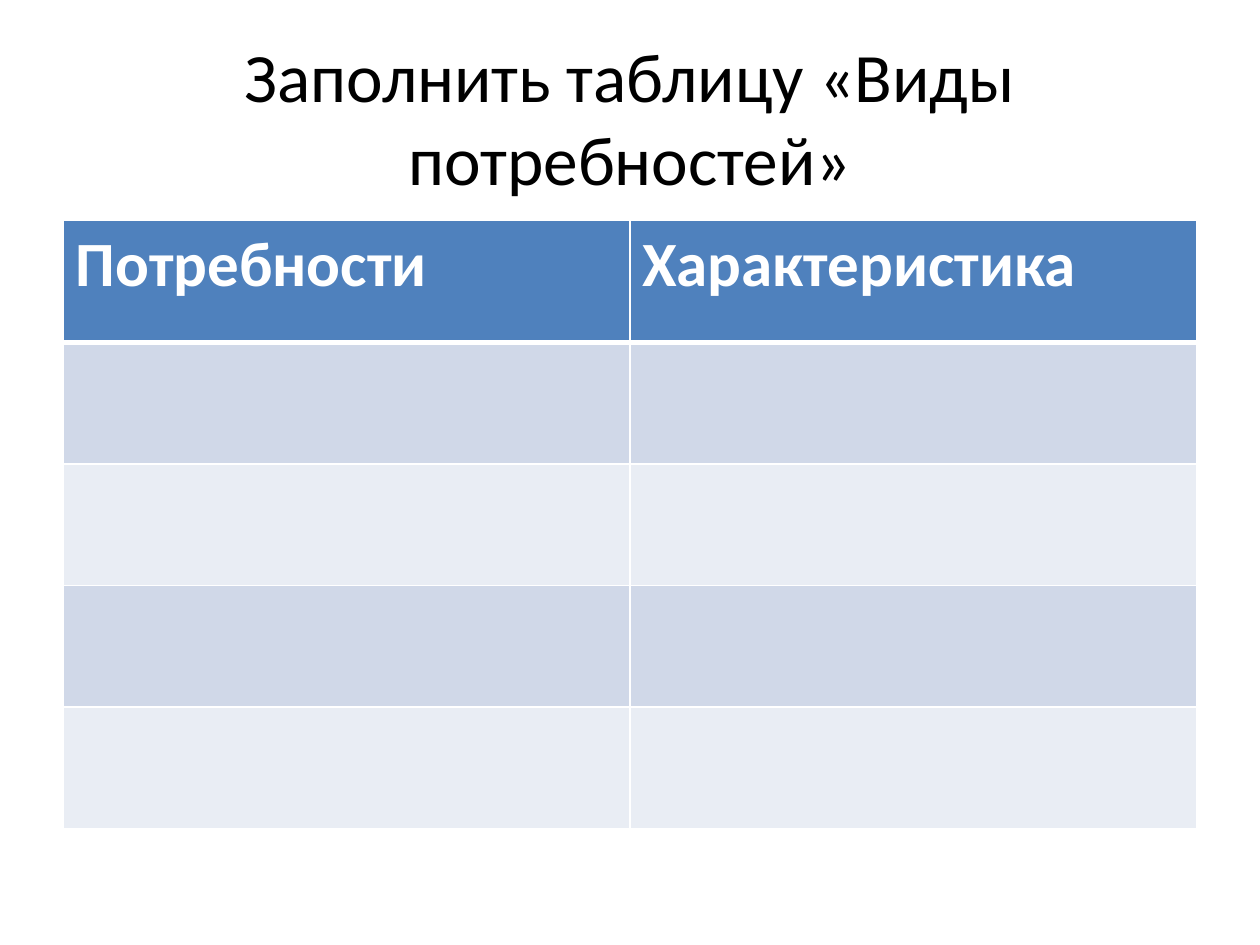
"""Build a slide with a title and an empty table about kinds of needs."""
import lxml.etree
import pptx
import pptx.dml.color
import pptx.enum.text
import pptx.oxml.ns
import pptx.util
from pptx.util import Inches


def color(value):
    return pptx.dml.color.RGBColor.from_string(value)


def add_border(cell, side, width):
    qn = pptx.oxml.ns.qn
    properties = cell._tc.get_or_add_tcPr()
    line = lxml.etree.SubElement(properties, qn(f"a:{side}"), w=str(pptx.util.Pt(width)))
    fill = lxml.etree.SubElement(line, qn("a:solidFill"))
    lxml.etree.SubElement(fill, qn("a:srgbClr"), val="FFFFFF")


presentation = pptx.Presentation()
presentation.slide_width = Inches(10)
presentation.slide_height = Inches(7.5)
slide = presentation.slides.add_slide(presentation.slide_layouts[5])

title = slide.shapes.title
title.left, title.top = Inches(0.5), Inches(0.3)
title.width, title.height = Inches(9), Inches(1.25)
title.text_frame.text = "Заполнить таблицу «Виды потребностей»"
title.text_frame.vertical_anchor = pptx.enum.text.MSO_ANCHOR.MIDDLE
paragraph = title.text_frame.paragraphs[0]
paragraph.alignment = pptx.enum.text.PP_ALIGN.CENTER
paragraph.font.name = "Calibri"
paragraph.font.size = pptx.util.Pt(39.6)
paragraph.font.color.rgb = color("000000")

headings = ["Потребности", "Характеристика"]
row_fills = ["4F81BD", "D0D8E8", "E9EDF4", "D0D8E8", "E9EDF4"]
table = slide.shapes.add_table(
    len(row_fills), len(headings), Inches(0.5), Inches(1.75), Inches(9), Inches(4.83)
).table

for row_index, row_fill in enumerate(row_fills):
    for cell in table.rows[row_index].cells:
        for side in ("lnL", "lnR", "lnT", "lnB"):
            below_heading = (row_index, side) in ((0, "lnB"), (1, "lnT"))
            add_border(cell, side, 3 if below_heading else 1)
        cell.fill.solid()
        cell.fill.fore_color.rgb = color(row_fill)

for cell, heading in zip(table.rows[0].cells, headings):
    cell.text = heading
    font = cell.text_frame.paragraphs[0].font
    font.name = "Calibri"
    font.size = pptx.util.Pt(36)
    font.bold = True
    font.color.rgb = color("FFFFFF")

presentation.save("out.pptx")
